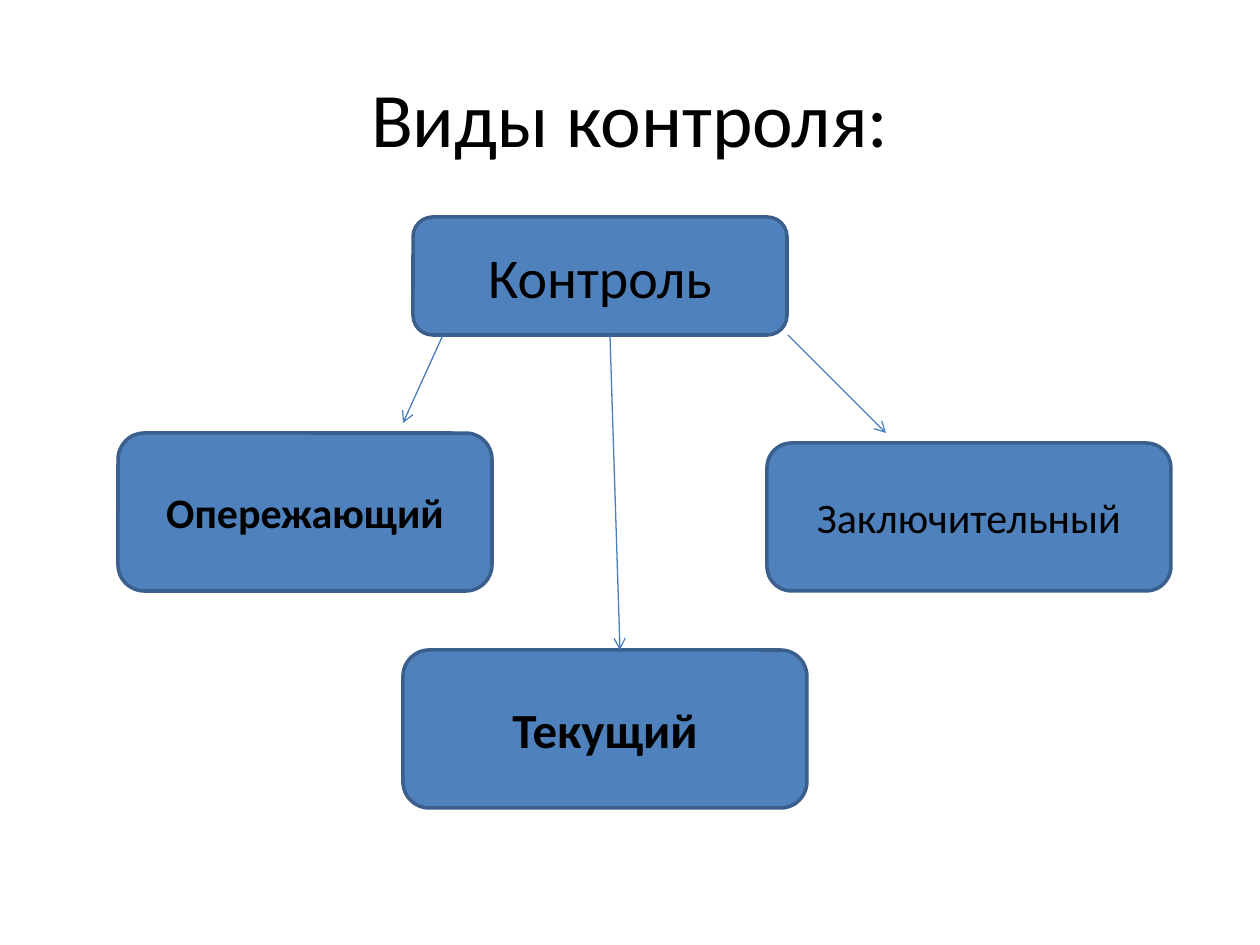
from lxml.etree import SubElement
from pptx import Presentation
from pptx.dml.color import RGBColor
from pptx.enum.shapes import MSO_CONNECTOR, MSO_SHAPE
from pptx.enum.text import MSO_ANCHOR, PP_ALIGN
from pptx.oxml.ns import qn
from pptx.util import Emu, Pt

PX_PER_INCH = 126
FONT = "Calibri"
BLACK = RGBColor(0x00, 0x00, 0x00)
BOX_FILL = RGBColor(0x4F, 0x81, 0xBD)
BOX_LINE = RGBColor(0x3A, 0x5F, 0x8C)
ARROW_LINE = RGBColor(0x4B, 0x7E, 0xBC)


def px(length):
    return Emu(round(length * 914400 / PX_PER_INCH))


class SlideBuilder:
    """Holds the diagram style and the current slide."""

    def __init__(self, slide):
        self.slide = slide
        self.shapes = slide.shapes

    def label(self, shape, text, size, bold=False):
        frame = shape.text_frame
        frame.word_wrap = True
        frame.vertical_anchor = MSO_ANCHOR.MIDDLE
        paragraph = frame.paragraphs[0]
        paragraph.alignment = PP_ALIGN.CENTER
        run = paragraph.add_run()
        run.text = text
        font_format = {"name": FONT, "size": Pt(size), "bold": bold}
        for attribute, value in font_format.items():
            setattr(run.font, attribute, value)
        run.font.color.rgb = BLACK

    def title(self, text, bounds, size):
        heading = self.shapes.add_textbox(*map(px, bounds))
        self.label(heading, text, size)

    def box(self, text, bounds, size, bold=False):
        box = self.shapes.add_shape(MSO_SHAPE.ROUNDED_RECTANGLE, *map(px, bounds))
        box.shadow.inherit = False
        box.fill.solid()
        box.fill.fore_color.rgb = BOX_FILL
        box.line.color.rgb = BOX_LINE
        box.line.width = Pt(2)
        self.label(box, text, size, bold)

    def arrow(self, start, end):
        arrow = self.shapes.add_connector(MSO_CONNECTOR.STRAIGHT, *map(px, start + end))
        arrow.line.color.rgb = ARROW_LINE
        arrow.line.width = Pt(0.75)
        properties = arrow._element.spPr
        SubElement(properties.find(qn("a:ln")), qn("a:tailEnd"), type="arrow")
        SubElement(properties, qn("a:effectLst"))


def main():
    presentation = Presentation()
    presentation.slide_width = px(1260)
    presentation.slide_height = px(945)
    builder = SlideBuilder(presentation.slides.add_slide(presentation.slide_layouts[6]))

    # Heading
    builder.title("Виды контроля:", (63, 38, 1134, 158), 44)

    # Control and its three kinds
    builder.box("Контроль", (413, 217, 374, 118), 32)
    builder.box("Опережающий", (118, 433, 374, 158), 24, bold=True)
    builder.box("Текущий", (403, 650, 404, 158), 28, bold=True)
    builder.box("Заключительный", (767, 443, 404, 148), 24)

    # Arrows from control to each kind
    control_bottom = 335
    for start_x, kind_point in (
        (443, (403, 423)),
        (610, (620, 650)),
        (788, (886, 433)),
    ):
        builder.arrow((start_x, control_bottom), kind_point)

    presentation.save("out.pptx")


if __name__ == "__main__":
    main()
